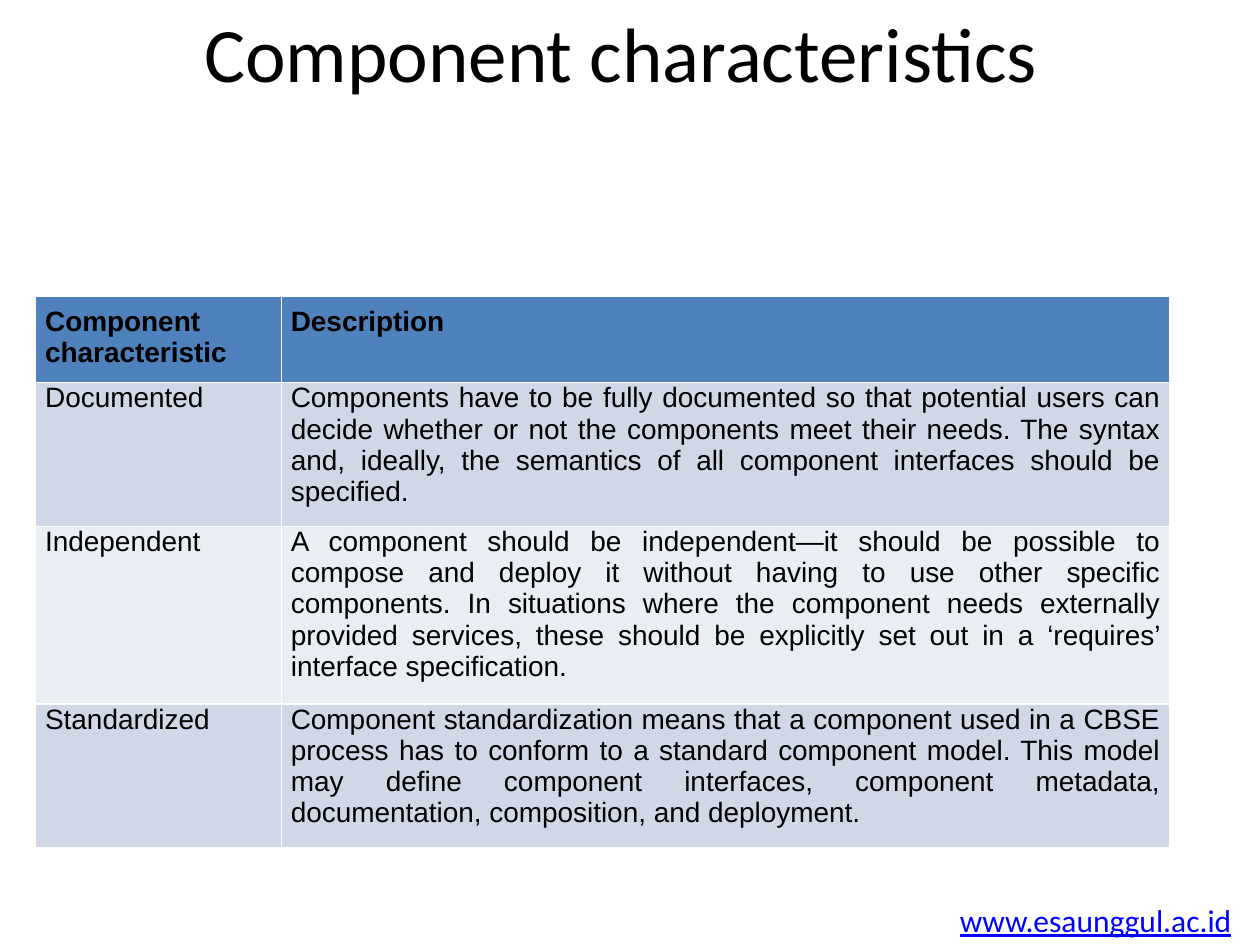
from lxml import etree
from pptx import Presentation
from pptx.dml.color import RGBColor
from pptx.enum.text import MSO_ANCHOR, PP_ALIGN
from pptx.oxml.ns import qn
from pptx.util import Pt

CENTER, JUSTIFY, LEFT = PP_ALIGN.CENTER, PP_ALIGN.JUSTIFY, PP_ALIGN.LEFT
TOP = MSO_ANCHOR.TOP

# Content
TITLE = "Component characteristics "
SITE = "www.esaunggul.ac.id"
ROWS = [
    ("Component characteristic", "Description"),
    ("Documented",
     "Components have to be fully documented so that potential users can decide "
     "whether or not the components meet their needs. The syntax and, ideally, the "
     "semantics of all component interfaces should be specified."),
    ("Independent",
     "A component should be independent—it should be possible to compose and deploy "
     "it without having to use other specific components. In situations where the "
     "component needs externally provided services, these should be explicitly set "
     "out in a ‘requires’ interface specification."),
    ("Standardized",
     "Component standardization means that a component used in a CBSE process has to "
     "conform to a standard component model. This model may define component "
     "interfaces, component metadata, documentation, composition, and deployment."),
]
COL_WIDTHS = (140.4, 507.6)
ROW_HEIGHTS = (46.8, 76.8, 94.6, 76.8)
HEADER_FILL, BAND_FILLS = "4F81BD", ("E9EDF4", "D0D8E8")


def rgb(value):
    return RGBColor.from_string(value)


def write(tf, text, size, font="Calibri", color="000000", bold=False,
          underline=False, align=LEFT):
    tf.vertical_anchor = TOP
    p = tf.paragraphs[0]
    p.alignment = align
    r = p.add_run()
    r.text = text
    r.font.size, r.font.name = Pt(size), font
    r.font.bold, r.font.underline = bold, underline
    r.font.color.rgb = rgb(color)


def set_borders(cell, color, width):
    tc_pr = cell._tc.get_or_add_tcPr()
    for side in ("lnL", "lnR", "lnT", "lnB"):
        ln = etree.SubElement(tc_pr, qn(f"a:{side}"), w=str(Pt(width)))
        fill = etree.SubElement(ln, qn("a:solidFill"))
        etree.SubElement(fill, qn("a:srgbClr"), val=color)


prs = Presentation()
prs.slide_width, prs.slide_height = Pt(720), Pt(540)
s = prs.slides.add_slide(prs.slide_layouts[5])

# Title
title = s.shapes.title
title.left, title.top, title.width, title.height = Pt(36), Pt(-0.7), Pt(648), Pt(90)
write(title.text_frame, TITLE, 44, align=CENTER)

# Web address
sp = s.shapes.add_textbox(Pt(541.4), Pt(511.2), Pt(171.4), Pt(28.8))
sp.text_frame.word_wrap = False
write(sp.text_frame, SITE, 18, color="0000FF", underline=True)

# Characteristics table
table = s.shapes.add_table(len(ROWS), len(COL_WIDTHS), Pt(20.4), Pt(169.5),
                           Pt(sum(COL_WIDTHS)), Pt(sum(ROW_HEIGHTS))).table
for column, width in zip(table.columns, COL_WIDTHS):
    column.width = Pt(width)
for i, (row, height) in enumerate(zip(table.rows, ROW_HEIGHTS)):
    row.height = Pt(height)
    header = i == 0
    for cell, text in zip(row.cells, ROWS[i]):
        cell.margin_left = cell.margin_right = cell.margin_bottom = Pt(5.4)
        cell.margin_top = Pt(5.4 if header else 0)
        set_borders(cell, "FFFFFF", 1)
        cell.fill.solid()
        cell.fill.fore_color.rgb = rgb(HEADER_FILL if header else BAND_FILLS[i % 2])
        cell.vertical_anchor = TOP
        write(cell.text_frame, text, 16, font="Arial", bold=header, align=JUSTIFY)

prs.save("out.pptx")
